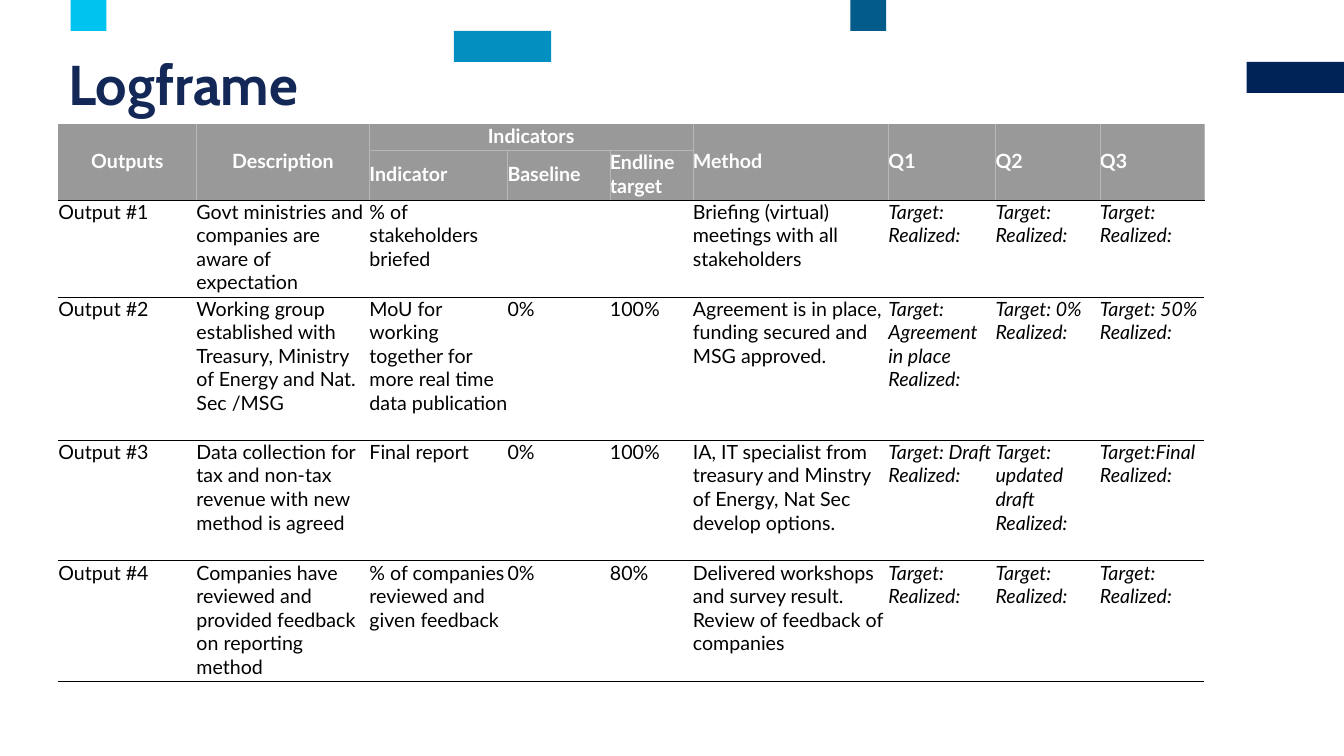
from pptx import Presentation
from pptx.dml.color import RGBColor
from pptx.enum.shapes import MSO_SHAPE
from pptx.enum.text import MSO_ANCHOR, PP_ALIGN
from pptx.oxml.ns import qn
from pptx.util import Cm, Pt
from lxml import etree

RECT = MSO_SHAPE.RECTANGLE
MID, TOP = MSO_ANCHOR.MIDDLE, MSO_ANCHOR.TOP
LEFT, MIDDLE = PP_ALIGN.LEFT, PP_ALIGN.CENTER

HUES = {
    "navy": "002357", "steel": "025B8B", "blue": "038FBF", "sky": "00C3F0",
    "title": "132856", "head": "999999", "edge": "B7B7B7",
    "rule": "000000", "ink": "000000", "white": "FFFFFF",
}
STEP = 0.78
BARS = [
    ("navy", 31.42, 2, 2.45),
    ("steel", 21.43, 0, 0.9),
    ("blue", 11.44, 1, 2.45),
    ("sky", 1.78, 0, 0.9),
]
COLS = [3.48, 4.36, 3.48, 2.58, 2.09, 4.93, 2.7, 2.63, 2.63]
ROWS = [0.66, 1.26, 2.44, 3.61, 3.04, 3.04]
GROUP = range(2, 5)
FIRST_Q = 6
OPEN = "Target: \nRealized:"

HEADS = [
    ["Outputs", "Description", "Indicators", "", "", "Method", "Q1", "Q2", "Q3"],
    ["", "", "Indicator", "Baseline", "Endline target", "", "", "", ""],
]
BODY = [
    ["Output #1", "Govt ministries and companies are aware of expectation",
     "% of stakeholders briefed", "", "",
     "Briefing (virtual) meetings with all stakeholders", OPEN, OPEN, OPEN],
    ["Output #2",
     "Working group established with Treasury, Ministry of Energy and Nat. Sec /MSG",
     "MoU for working together for more real time data publication", "0%", "100%",
     "Agreement is in place, funding secured and MSG approved.",
     "Target: Agreement in place \nRealized:", "Target: 0%\nRealized:",
     "Target: 50%\nRealized:"],
    ["Output #3",
     "Data collection for tax and non-tax revenue with new method is agreed",
     "Final report", "0%", "100%",
     "IA, IT specialist from treasury and Minstry of Energy, Nat Sec develop options.",
     "Target: Draft\nRealized:", "Target: updated draft \nRealized:",
     "Target:Final\nRealized:"],
    ["Output #4",
     "Companies have reviewed and provided feedback on reporting method",
     "% of companies reviewed and given feedback", "0%", "80%",
     "Delivered workshops and survey result. Review of feedback of companies",
     OPEN, OPEN, OPEN],
]


def hue(name):
    return RGBColor.from_string(HUES[name])


def apply(item, style):
    for key, value in style.items():
        setattr(item, key, value)


def add_bars(slide, left, top):
    for name, x, level, width in BARS:
        bar = slide.shapes.add_shape(
            RECT, Cm(left + x), Cm(top + level * STEP), Cm(width), Cm(STEP))
        bar.shadow.inherit = False
        bar.fill.solid()
        bar.fill.fore_color.rgb = hue(name)
        bar.line.fill.background()


def add_title(slide, left, top, width, height):
    box = slide.shapes.add_textbox(Cm(left), Cm(top), Cm(width), Cm(height))
    apply(box.text_frame, {"word_wrap": True, "vertical_anchor": MID})
    para = box.text_frame.paragraphs[0]
    para.text = "Logframe"
    para.line_spacing = 0.89
    apply(para.font, {"name": "Cabin", "size": Pt(40), "bold": True})
    para.font.color.rgb = hue("title")


def add_edges(cell, edges):
    props = cell._tc.get_or_add_tcPr()
    for side in "LRTB":
        line = etree.SubElement(props, qn(f"a:ln{side}"))
        if side in edges:
            name, width = edges[side]
            line.set("w", str(Pt(width)))
            fill = etree.SubElement(line, qn("a:solidFill"))
            etree.SubElement(fill, qn("a:srgbClr")).set("val", HUES[name])
        else:
            etree.SubElement(line, qn("a:noFill"))


def pick_edges(row, col):
    if row >= len(HEADS):
        thick = 0.5 if row == 2 else 1
        return {"T": ("rule", 0.5 if row < 4 else 1), "B": ("rule", thick)}
    gray = ("edge", 0.5)
    edges = {"R": gray, "B": ("rule", 0.5)}
    if col:
        edges["L"] = gray
    if col in GROUP:
        edges["B" if row == 0 else "T"] = gray
    return edges


def fill_cell(cell, text, row, col):
    head = row < len(HEADS)
    add_edges(cell, pick_edges(row, col))
    apply(cell, {
        "margin_left": 0, "margin_right": 0, "margin_top": 0,
        "margin_bottom": Cm(0.05), "vertical_anchor": MID if head else TOP,
    })
    if head:
        cell.fill.solid()
        cell.fill.fore_color.rgb = hue("head")
    else:
        cell.fill.background()
    para = cell.text_frame.paragraphs[0]
    para.text = text
    para.alignment = MIDDLE if row == 0 and col < 3 else LEFT
    apply(para.font, {
        "name": "Lato", "size": Pt(14), "bold": head,
        "italic": not head and col >= FIRST_Q,
    })
    para.font.color.rgb = hue("white" if head else "ink")


def add_frame(slide, left, top):
    frame = slide.shapes.add_table(
        len(ROWS), len(COLS), Cm(left), Cm(top), Cm(sum(COLS)), Cm(sum(ROWS)))
    table = frame.table
    apply(table, {"first_row": False, "horz_banding": False})
    for col, width in zip(table.columns, COLS):
        col.width = Cm(width)
    for row, height in zip(table.rows, ROWS):
        row.height = Cm(height)
    for r, texts in enumerate(HEADS + BODY):
        for c, text in enumerate(texts):
            fill_cell(table.cell(r, c), text, r, c)
    table.cell(0, GROUP[0]).merge(table.cell(0, GROUP[-1]))
    for c in range(len(COLS)):
        if c not in GROUP:
            table.cell(0, c).merge(table.cell(1, c))


def main():
    deck = Presentation()
    apply(deck, {"slide_width": Cm(33.87), "slide_height": Cm(19.05)})
    slide = deck.slides.add_slide(deck.slide_layouts[6])
    add_bars(slide, 0, 0)
    add_title(slide, 1.47, 1.27, 30.3, 1.85)
    add_frame(slide, 1.47, 3.12)
    deck.save("out.pptx")


if __name__ == "__main__":
    main()
